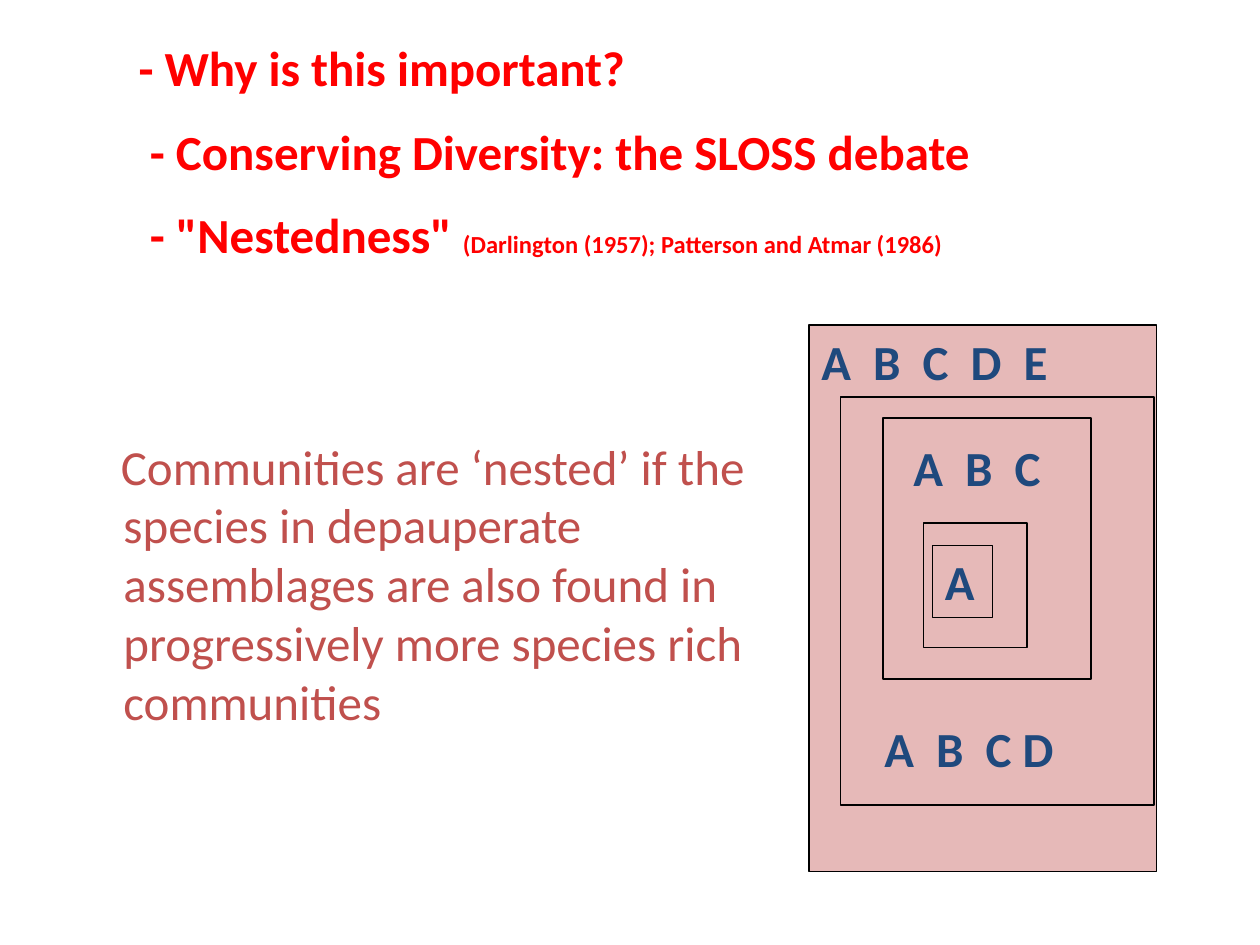
from pptx import Presentation
from pptx.dml.color import RGBColor
from pptx.enum import shapes, text
from pptx.oxml.ns import qn
from pptx.util import Inches, Pt

COLORS = {"heading": "FF0000", "body": "C0504D", "label": "1F497D",
          "box": "E6B9B8", "line": "000000", "white": "FFFFFF"}
FONT = "Calibri"

HEADINGS = [
    (0, [("- Why is this important?", 28)]),
    (0.09, [("- Conserving Diversity: the SLOSS debate", 28)]),
    (0.09, [('- "Nestedness" ', 28),
            ("(Darlington (1957); Patterson and Atmar (1986)", 14)]),
]
DEFINITION = ("Communities are ‘nested’ if the species in depauperate assemblages "
              "are also found in progressively more species rich communities")
NESTED_BOXES = [
    ((6.42, 2.58, 2.76, 4.34), 0.75, "A  B  C  D  E"),
    ((6.67, 3.15, 2.49, 3.24), 1, ""),
    ((7.01, 3.32, 1.65, 2.07), 1, ""),
    ((7.33, 4.15, 0.82, 0.99), 1, ""),
    ((7.4, 4.33, 0.48, 0.57), 0.75, "A"),
    ((7.15, 3.42, 1.48, 0.57), 0, "A  B  C"),
    ((6.92, 5.65, 1.86, 0.57), 0, "A  B  C D"),
]


def color(name):
    return RGBColor.from_string(COLORS[name])


def place(sp, box):
    sp.left, sp.top, sp.width, sp.height = map(Inches, box)


def set_frame(tf, wrap=True):
    tf.auto_size = text.MSO_AUTO_SIZE.NONE
    tf.word_wrap = wrap
    tf.vertical_anchor = text.MSO_ANCHOR.TOP


def add_run(p, words, size, name, bold):
    r = p.add_run()
    r.text = words
    r.font.name = FONT
    r.font.size = Pt(size)
    r.font.bold = bold
    r.font.color.rgb = color(name)


def set_indent(p, left, first=0):
    pPr = p._p.get_or_add_pPr()
    pPr.set("marL", str(Inches(left)))
    pPr.set("indent", str(Inches(first)))


def add_headings(sp):
    place(sp, (1, 0.25, 8.67, 2.69))
    sp.fill.solid()
    sp.fill.fore_color.rgb = color("white")
    tf = sp.text_frame
    set_frame(tf)
    for i, (left, runs) in enumerate(HEADINGS):
        p = tf.add_paragraph() if i else tf.paragraphs[0]
        p.alignment = text.PP_ALIGN.LEFT
        p.space_before = Pt(14 if i else 0)
        set_indent(p, left)
        for words, size in runs:
            add_run(p, words, size, "heading", True)


def add_definition(sp):
    place(sp, (0.5, 2.67, 5.83, 4.67))
    tf = sp.text_frame
    set_frame(tf)
    tf.margin_top = Inches(0.79)
    p = tf.paragraphs[0]
    p.space_before = Pt(0)
    set_indent(p, 0.38, -0.02)
    pPr = p._p.get_or_add_pPr()
    pPr.append(pPr.makeelement(qn("a:buNone"), {}))
    add_run(p, DEFINITION, 28, "body", False)


def add_box(s, box, line, label):
    sp = s.shapes.add_shape(shapes.MSO_SHAPE.RECTANGLE, *map(Inches, box))
    sp.shadow.inherit = False
    sp.fill.solid()
    sp.fill.fore_color.rgb = color("box")
    if line:
        sp.line.color.rgb = color("line")
        sp.line.width = Pt(line)
    else:
        sp.line.fill.background()
    if label:
        set_frame(sp.text_frame, wrap=box[2] > 2)
        p = sp.text_frame.paragraphs[0]
        p.alignment = text.PP_ALIGN.LEFT
        add_run(p, label, 28, "label", True)


def main():
    prs = Presentation()
    prs.slide_width, prs.slide_height = Inches(10), Inches(7.5)
    s = prs.slides.add_slide(prs.slide_layouts[1])
    add_headings(s.shapes.title)
    add_definition(s.placeholders[1])
    for box, line, label in NESTED_BOXES:
        add_box(s, box, line, label)
    prs.save("out.pptx")


if __name__ == "__main__":
    main()
